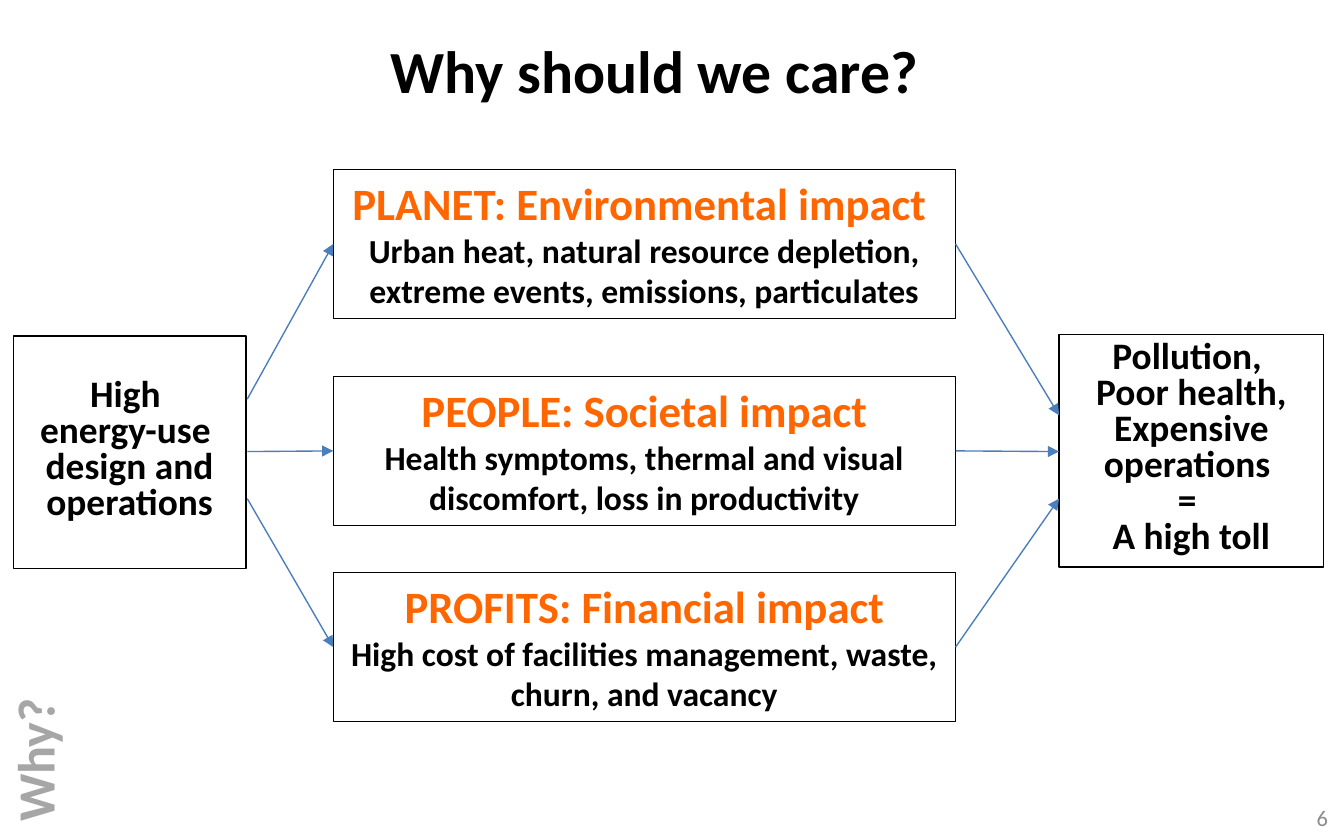
from dataclasses import dataclass

from lxml import etree
from pptx import Presentation
from pptx.dml.color import RGBColor
from pptx.enum.shapes import MSO_CONNECTOR, MSO_SHAPE
from pptx.enum.text import MSO_ANCHOR, PP_ALIGN
from pptx.oxml.ns import qn
from pptx.util import Inches, Pt

COLS, ROWS = 100, 62.5
WIDE, HIGH = Inches(10), Inches(6.25)


@dataclass(frozen=True)
class Theme:
    face: str = "Calibri"
    ink: str = "000000"
    accent: str = "FF6600"
    arrow: str = "4B7EBC"
    gray: str = "8C8C8C"
    pale: str = "A6A6A6"
    title: int = 32
    side: int = 28
    head: int = 24
    label: int = 20
    body: int = 18
    page: int = 12
    line: float = 0.75
    tight: float = 0.8


THEME = Theme()


def col(count):
    return round(WIDE * count / COLS)


def row(count):
    return round(HIGH * count / ROWS)


def place(left, top, width, height):
    return col(left), row(top), col(width), row(height)


def apply(target, values):
    for name, value in values.items():
        setattr(target, name, value)


def write(frame, lines, align=PP_ALIGN.CENTER, gap=1.0):
    for index, (text, size, color, bold) in enumerate(lines):
        para = frame.add_paragraph() if index else frame.paragraphs[0]
        apply(para, {"alignment": align, "line_spacing": gap})
        run = para.add_run()
        run.text = text
        apply(run.font, {"name": THEME.face, "size": Pt(size), "bold": bold})
        run.font.color.rgb = RGBColor.from_string(color)


def add_text(slide, area, line, align, gap=1.0, turn=0):
    box = slide.shapes.add_textbox(*place(*area))
    box.rotation = turn
    apply(box.text_frame, {"word_wrap": True, "vertical_anchor": MSO_ANCHOR.MIDDLE})
    write(box.text_frame, [line], align, gap)


def add_box(slide, area, lines, gap=1.0, inset=0.5):
    box = slide.shapes.add_shape(MSO_SHAPE.RECTANGLE, *place(*area))
    box.shadow.inherit = False
    box.fill.background()
    box.line.color.rgb = RGBColor.from_string(THEME.ink)
    box.line.width = Pt(THEME.line)
    apply(box.text_frame, {
        "word_wrap": True,
        "vertical_anchor": MSO_ANCHOR.TOP,
        "margin_top": row(inset),
    })
    write(box.text_frame, lines, gap=gap)


def add_label(slide, area, texts, inset=0.5):
    lines = [(text, THEME.label, THEME.ink, True) for text in texts]
    add_box(slide, area, lines, THEME.tight, inset)


def add_card(slide, area, head, body):
    add_box(slide, area, [
        (head, THEME.head, THEME.accent, True),
        (body, THEME.body, THEME.ink, True),
    ])


def add_arrow(slide, start, end):
    (left, top), (right, low) = start, end
    link = slide.shapes.add_connector(
        MSO_CONNECTOR.STRAIGHT, col(left), row(top), col(right), row(low))
    link.line.color.rgb = RGBColor.from_string(THEME.arrow)
    link.line.width = Pt(THEME.line)
    tip = etree.SubElement(link.line._get_or_add_ln(), qn("a:tailEnd"))
    tip.set("type", "triangle")
    etree.SubElement(link._element.spPr, qn("a:effectLst"))


def main():
    deck = Presentation()
    apply(deck, {"slide_width": WIDE, "slide_height": HIGH})
    slide = deck.slides.add_slide(deck.slide_layouts[6])

    add_text(slide, (-0.3, 0.5, 98, 10.4),
             ("Why should we care?", THEME.title, THEME.ink, True),
             PP_ALIGN.CENTER, THEME.tight)
    add_text(slide, (76.5, 59.2, 23.3, 3.3),
             ("6", THEME.page, THEME.gray, False), PP_ALIGN.RIGHT)
    add_text(slide, (-29.4, 25, 63.8, 10.4),
             ("Why?", THEME.side, THEME.pale, True), PP_ALIGN.LEFT, turn=270)

    add_label(slide, (1, 25, 17.3, 17.3),
              ["High ", "energy-use ", "design and operations"], inset=3.2)
    add_label(slide, (78.8, 24.9, 19.7, 17.3),
              ["Pollution, ", "Poor health, Expensive operations ", "= ", "A high toll"])

    left, width, height = 24.8, 46.3, 11.1
    right = left + width
    cards = [
        (12.6, 29.7, 30.9, "PLANET: Environmental impact ",
         "Urban heat, natural resource depletion, extreme events, emissions, particulates"),
        (28, 33.6, 33.6, "PEOPLE: Societal impact",
         "Health symptoms, thermal and visual discomfort, loss in productivity"),
        (42.6, 37.1, 37.1, "PROFITS: Financial impact",
         "High cost of facilities management, waste, churn, and vacancy"),
    ]
    for top, cause, toll, head, body in cards:
        mid = top + height / 2
        add_card(slide, (left, top, width, height), head, body)
        add_arrow(slide, (18.4, cause), (left, mid))
        add_arrow(slide, (right, mid), (78.8, toll))

    deck.save("out.pptx")


if __name__ == "__main__":
    main()
